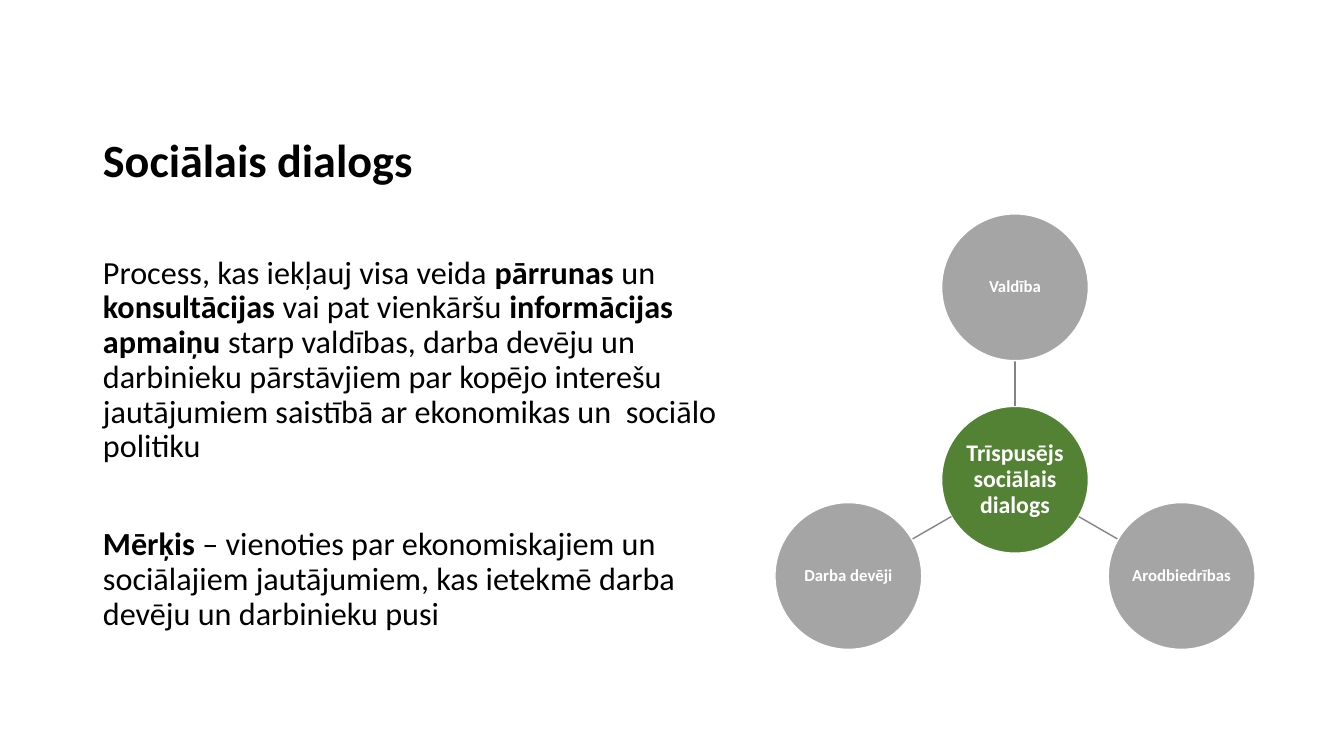
from dataclasses import dataclass
from math import cos, radians, sin

from pptx import Presentation
from pptx.dml.color import RGBColor
from pptx.enum import shapes, text
from pptx.oxml import ns, xmlchemy
from pptx.util import Cm, Pt


@dataclass(frozen=True)
class Theme:
    font: str = "Calibri"
    ink: str = "000000"
    paper: str = "FFFFFF"
    hub: str = "548235"
    partner: str = "A5A5A5"
    spoke: str = "848484"
    title_size: int = 33
    body_size: int = 23
    hub_size: int = 17
    partner_size: int = 12


theme = Theme()


def add_text(para, words, size, color=theme.ink, bold=False, align=text.PP_ALIGN.LEFT):
    para.alignment = align
    para.line_spacing = 0.9
    span = para.add_run()
    span.text = words
    span.font.name = theme.font
    span.font.size = Pt(size)
    span.font.bold = bold
    span.font.color.rgb = RGBColor.from_string(color)


def add_circle(page, x, y, label, fill, size):
    circle = page.shapes.add_shape(
        shapes.MSO_SHAPE.OVAL, Cm(x - radius), Cm(y - radius), Cm(2 * radius), Cm(2 * radius))
    circle.shadow.inherit = False
    circle.fill.solid()
    circle.fill.fore_color.rgb = RGBColor.from_string(fill)
    circle.line.color.rgb = RGBColor.from_string(theme.paper)
    circle.line.width = Pt(1)
    frame = circle.text_frame
    frame.word_wrap = True
    frame.vertical_anchor = text.MSO_ANCHOR.MIDDLE
    frame.margin_left = frame.margin_right = frame.margin_top = frame.margin_bottom = Cm(0.02)
    add_text(frame.paragraphs[0], label, size, theme.paper, True, text.PP_ALIGN.CENTER)


deck = Presentation()
deck.slide_width, deck.slide_height = Cm(33.87), Cm(19.05)
page = deck.slides.add_slide(deck.slide_layouts[1])

# Title
title = page.shapes.title
title.left, title.top, title.width, title.height = Cm(2.34), Cm(2.82), Cm(11.94), Cm(2.54)
title.text_frame.vertical_anchor = text.MSO_ANCHOR.MIDDLE
title.text_frame.auto_size = text.MSO_AUTO_SIZE.NONE
add_text(title.text_frame.paragraphs[0], "Sociālais dialogs", theme.title_size, bold=True)

# Definition and aim, as (words, bold) pieces
paragraphs = [
    [("Process, kas iekļauj visa veida ", False), ("pārrunas", True), (" un ", False),
     ("konsultācijas", True), (" vai pat vienkāršu ", False), ("informācijas apmaiņu ", True),
     ("starp valdības, darba devēju un darbinieku pārstāvjiem par kopējo interešu "
      "jautājumiem saistībā ar ekonomikas un  sociālo politiku", False)],
    [("Mērķis ", True),
     ("– vienoties par ekonomiskajiem un sociālajiem jautājumiem, kas ietekmē darba "
      "devēju un darbinieku pusi", False)],
]
body = page.placeholders[1]
body.left, body.top, body.width, body.height = Cm(2.34), Cm(6.33), Cm(16.99), Cm(11.78)
frame = body.text_frame
frame.auto_size = text.MSO_AUTO_SIZE.NONE
frame.vertical_anchor = text.MSO_ANCHOR.TOP
for index, pieces in enumerate(paragraphs):
    para = frame.add_paragraph() if index else frame.paragraphs[0]
    props = para._p.get_or_add_pPr()
    props.set("marL", "0")
    props.set("indent", "0")
    props.append(xmlchemy.OxmlElement("a:buNone"))
    para.space_before = Pt(45 if index else 0)
    for words, bold in pieces:
        add_text(para, words, theme.body_size, bold=bold)

# Hub of the diagram
hub_x, hub_y, radius, orbit = 25.58, 12.09, 1.85, 4.85
add_circle(page, hub_x, hub_y, "Trīspusējs sociālais dialogs", theme.hub, theme.hub_size)

# Partners at equal angles, each joined to the hub
partners = ["Valdība", "Arodbiedrības", "Darba devēji"]
for index, label in enumerate(partners):
    angle = radians(-90 + index * 360 / len(partners))
    dx, dy = cos(angle), sin(angle)
    start, end = radius, orbit - radius
    spoke = page.shapes.add_connector(
        shapes.MSO_CONNECTOR.STRAIGHT,
        Cm(hub_x + start * dx), Cm(hub_y + start * dy),
        Cm(hub_x + end * dx), Cm(hub_y + end * dy))
    spoke.line.color.rgb = RGBColor.from_string(theme.spoke)
    spoke.line.width = Pt(1)
    spoke._element.find(ns.qn("p:spPr")).append(xmlchemy.OxmlElement("a:effectLst"))
    add_circle(page, hub_x + orbit * dx, hub_y + orbit * dy, label,
               theme.partner, theme.partner_size)

deck.save("out.pptx")
